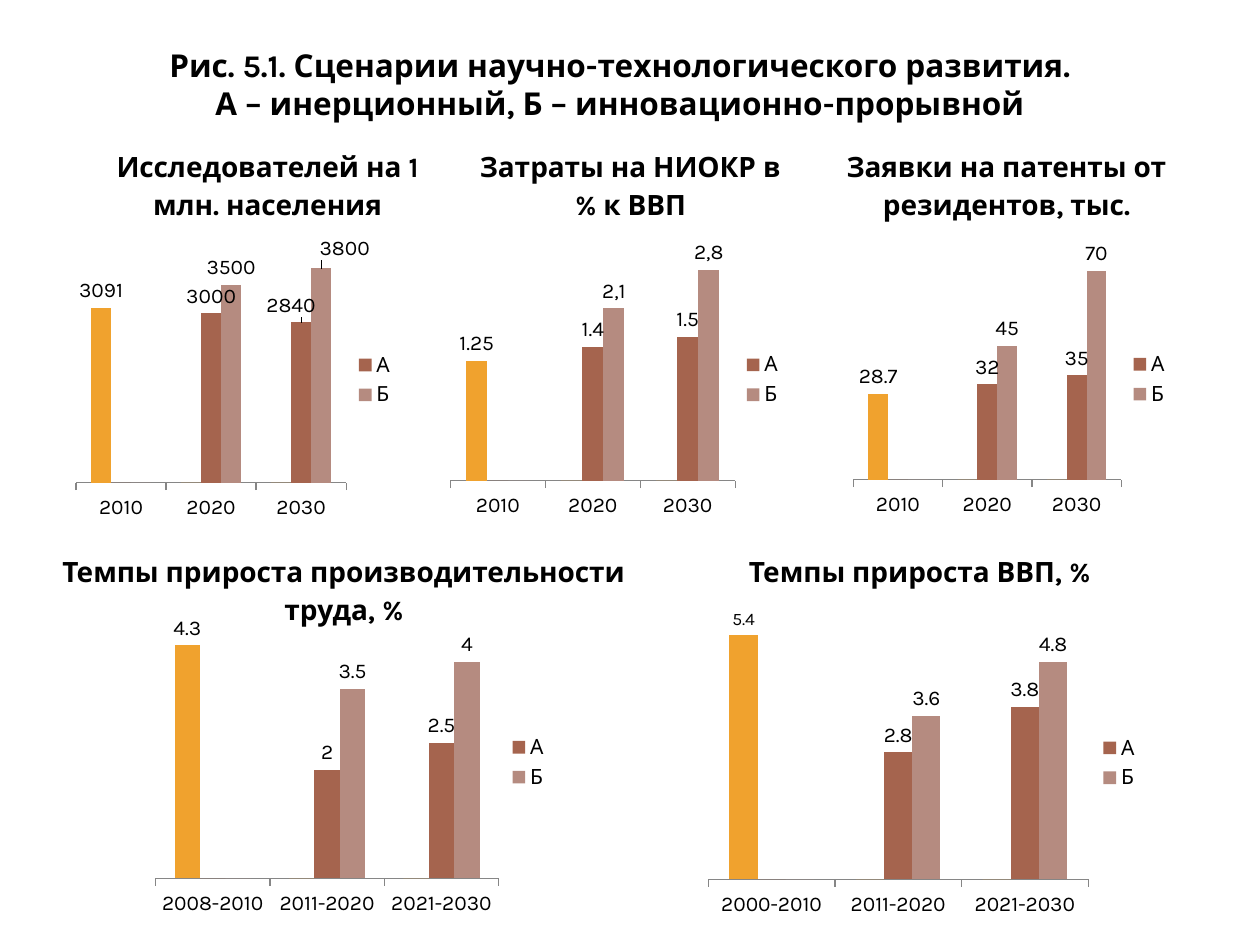
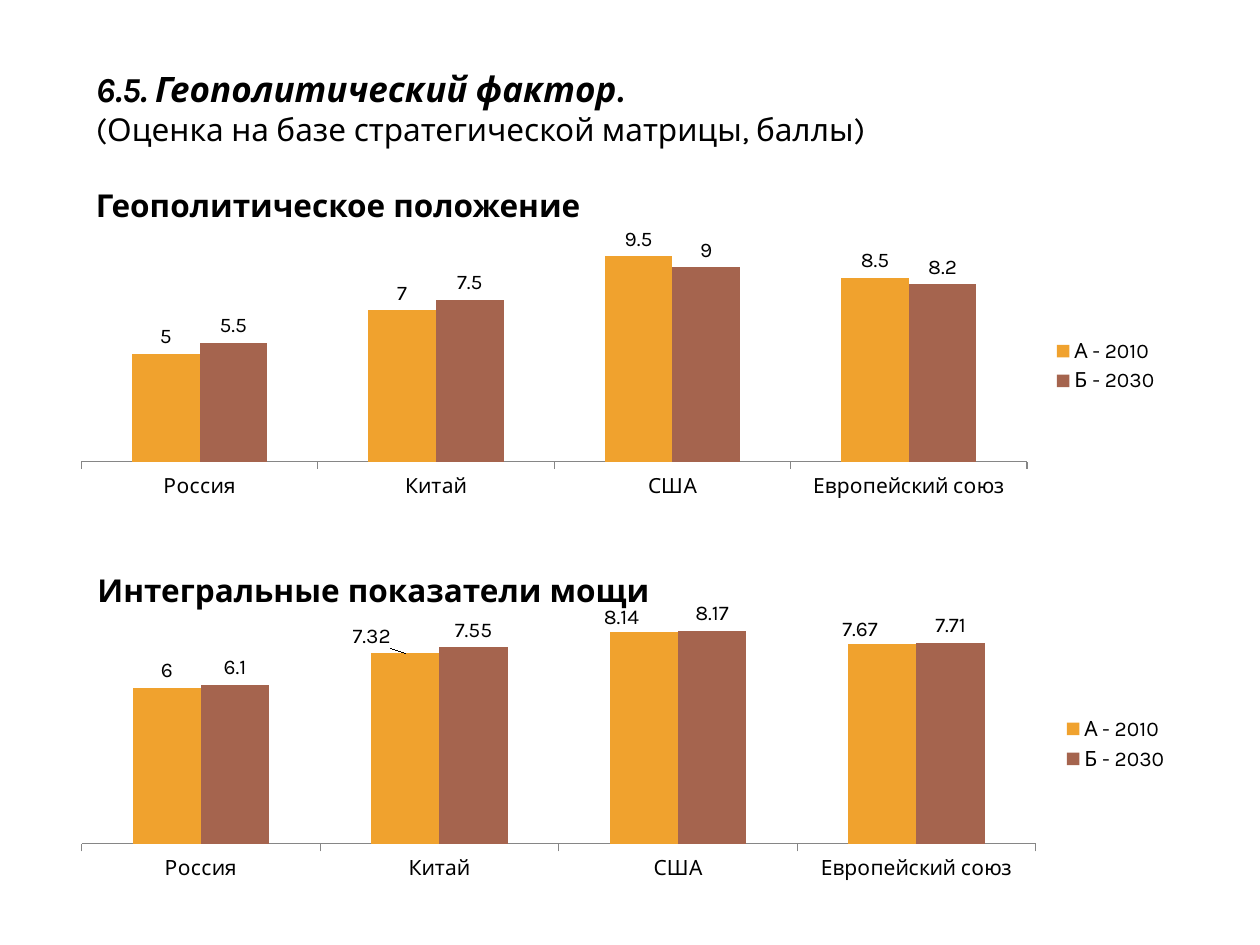
from lxml.etree import SubElement
from pptx import Presentation
from pptx.chart.data import CategoryChartData
from pptx.dml.color import RGBColor
from pptx.enum.chart import (XL_CHART_TYPE, XL_LABEL_POSITION,
                             XL_LEGEND_POSITION, XL_TICK_MARK)
from pptx.enum.text import MSO_ANCHOR, MSO_AUTO_SIZE, PP_ALIGN
from pptx.oxml import parse_xml
from pptx.oxml.ns import nsdecls, qn
from pptx.util import Pt

FONT = "Karla"
BLACK = RGBColor(0x00, 0x00, 0x00)
AXIS_GRAY = RGBColor(0x86, 0x86, 0x86)
ORANGE = RGBColor(0xF0, 0xA2, 0x2E)
BROWN = RGBColor(0xA5, 0x64, 0x4E)
ROSE = RGBColor(0xB5, 0x8B, 0x80)

YEARS = ["2010", "2020", "2030"]
COUNTRIES = ["Россия", "Китай", "США", "Европейский союз"]


def add_run(paragraph, text, size, bold=True, italic=False):
    run = paragraph.add_run()
    run.text = text
    font = run.font
    font.name, font.size = FONT, Pt(size)
    font.bold, font.italic = bold, italic
    font.color.rgb = BLACK


def add_text(slide, box, lines, align=PP_ALIGN.LEFT, indent=0,
             anchor=MSO_ANCHOR.MIDDLE):
    """Each line is (text, size, bold, italic, space before)."""
    frame = slide.shapes.add_textbox(*map(Pt, box)).text_frame
    frame.word_wrap = True
    frame.auto_size = MSO_AUTO_SIZE.SHAPE_TO_FIT_TEXT
    frame.vertical_anchor = anchor
    for index, (text, size, bold, italic, before) in enumerate(lines):
        paragraph = frame.add_paragraph() if index else frame.paragraphs[0]
        paragraph.alignment = align
        paragraph.space_before = Pt(before)
        paragraph._p.get_or_add_pPr().set("marL", str(Pt(indent)))
        add_run(paragraph, text, size, bold, italic)


def add_caption_row(slide, left, top, height, widths, captions):
    """Borderless one-row table with a heading above each chart."""
    table = slide.shapes.add_table(1, len(widths), Pt(left), Pt(top),
                                   Pt(sum(widths)), Pt(height)).table
    table.first_row = table.horz_banding = False
    table.rows[0].height = Pt(height)
    for column, (width, caption) in enumerate(zip(widths, captions)):
        table.columns[column].width = Pt(width)
        cell = table.cell(0, column)
        cell.fill.background()
        cell.margin_left = cell.margin_right = Pt(5)
        cell.margin_top = cell.margin_bottom = 0
        paragraph = cell.text_frame.paragraphs[0]
        paragraph.alignment = PP_ALIGN.CENTER
        paragraph.line_spacing = 1.15
        add_run(paragraph, caption, 16)


def layout_element(**settings):
    body = "".join(f'<c:{name} val="{value}"/>'
                   for name, value in settings.items())
    return parse_xml(f'<c:layout {nsdecls("c")}><c:manualLayout>{body}'
                     '</c:manualLayout></c:layout>')


def point_label(series, index):
    """Return the label of one point and its XML element."""
    label = series.points[index].data_label
    label.position = XL_LABEL_POSITION.OUTSIDE_END
    element = series.data_labels._element.xpath(
        f'c:dLbl[c:idx/@val="{index}"]')[0]
    return label, element


def hide_label(series, index):
    element = point_label(series, index)[1]
    for child in list(element)[1:]:
        element.remove(child)
    SubElement(element, qn("c:delete")).set("val", "1")


def shift_label(series, index, dx, dy=0):
    point_label(series, index)[1].insert(1, layout_element(x=dx, y=dy))


def rewrite_label(series, index, text):
    frame = point_label(series, index)[0].text_frame
    add_run(frame.paragraphs[0], text, 12, bold=False)


def add_columns(slide, box, categories, series_list, maximum, plot_box):
    """series_list holds (name, values, colour); plot_box is (top, width,
    height) of the inner plot as shares of the chart."""
    data = CategoryChartData()
    data.categories = categories
    for name, values, _ in series_list:
        data.add_series(name, values)
    chart = slide.shapes.add_chart(XL_CHART_TYPE.COLUMN_CLUSTERED,
                                   *map(Pt, box), data).chart
    chart.has_title = False
    chart.font.name, chart.font.size = FONT, Pt(12)
    chart.font.color.rgb = BLACK
    chart.has_legend = True
    chart.legend.position = XL_LEGEND_POSITION.RIGHT
    chart.legend.include_in_layout = False

    value_axis = chart.value_axis
    value_axis.visible = value_axis.has_major_gridlines = False
    value_axis.minimum_scale, value_axis.maximum_scale = 0, maximum
    category_axis = chart.category_axis
    category_axis.major_tick_mark = XL_TICK_MARK.OUTSIDE
    category_axis.format.line.color.rgb = AXIS_GRAY

    plot = chart.plots[0]
    plot.vary_by_categories = False
    plot.gap_width, plot.overlap = 150, 0
    for series, (_, values, color) in zip(plot.series, series_list):
        series.format.fill.solid()
        series.format.fill.fore_color.rgb = color
        series.data_labels.show_value = True
        series.data_labels.position = XL_LABEL_POSITION.OUTSIDE_END
        for index, value in enumerate(values):
            if value == 0:
                hide_label(series, index)

    plot_area = chart._chartSpace.xpath("c:chart/c:plotArea")[0]
    for old_layout in plot_area.findall(qn("c:layout")):
        plot_area.remove(old_layout)
    top, width, height = plot_box
    plot_area.insert(0, layout_element(
        layoutTarget="inner", xMode="edge", yMode="edge",
        x=0.02, y=top, w=width, h=height))
    return chart


def add_scenarios(slide, box, periods, base, inertial, breakthrough,
                  maximum, plot_box):
    """Base-period column followed by scenarios А and Б."""
    chart = add_columns(slide, box, periods, [
        ("Series 1", [base, 0, 0], ORANGE),
        ("А", [0, *inertial], BROWN),
        ("Б", [0, *breakthrough], ROSE),
    ], maximum, plot_box)
    chart.legend._element.insert(1, parse_xml(
        f'<c:legendEntry {nsdecls("c")}><c:idx val="0"/>'
        '<c:delete val="1"/></c:legendEntry>'))
    return chart.plots[0].series


def add_countries(slide, box, values_2010, values_2030, maximum, plot_box):
    chart = add_columns(slide, box, COUNTRIES, [
        ("А - 2010", values_2010, ORANGE),
        ("Б - 2030", values_2030, BROWN),
    ], maximum, plot_box)
    return chart.plots[0].series


def build_scenarios(slide):
    add_caption_row(slide, 44.6, 84.2, 56.2, [216.7, 198, 231.8], [
        "Исследователей на 1 млн. населения",
        "Затраты на НИОКР в % к ВВП",
        "Заявки на патенты от резидентов, тыс."])
    add_text(slide, (78.5, 22.3, 551.5, 51.1), [
        ("Рис. 5.1. Сценарии научно-технологического развития.",
         18, True, False, 0),
        ("А – инерционный, Б – инновационно-прорывной", 18, True, False, 0),
    ], PP_ALIGN.CENTER)
    add_caption_row(slide, 22.3, 315.4, 45.4, [348.5, 309.6], [
        "Темпы прироста производительности труда, %",
        "Темпы прироста ВВП, %"])

    _, inertial, breakthrough = add_scenarios(
        slide, (39.6, 134.6, 193, 164.2), YEARS,
        3091, [3000, 2840], [3500, 3800], 4000, (0.07, 0.8, 0.79))
    shift_label(inertial, 2, -0.03)
    shift_label(breakthrough, 2, 0.07, -0.01)

    _, _, breakthrough = add_scenarios(
        slide, (253.4, 134.6, 200.9, 164.9), YEARS,
        1.25, [1.4, 1.5], [1.8, 2.2], 2.5, (0.02, 0.81, 0.83))
    rewrite_label(breakthrough, 1, "2,1")
    rewrite_label(breakthrough, 2, "2,8")

    add_scenarios(slide, (483.8, 134.6, 191.5, 164.2), YEARS,
                  28.7, [32, 35], [45, 70], 80, (0.02, 0.8, 0.83))
    add_scenarios(slide, (84.2, 343.4, 236.2, 184.3),
                  ["2008-2010", "2011-2020", "2021-2030"],
                  4.3, [2, 2.5], [3.5, 4], 5, (0.02, 0.83, 0.84))
    base, _, _ = add_scenarios(
        slide, (399.6, 343.4, 258.5, 185),
        ["2000-2010", "2011-2020", "2021-2030"],
        5.4, [2.8, 3.8], [3.6, 4.8], 6, (0.02, 0.84, 0.84))
    point_label(base, 0)[0].font.size = Pt(10)


def build_geopolitics(slide):
    add_text(slide, (33.8, 35.3, 528.5, 121), [
        ("6.5. Геополитический фактор.", 20, True, True, 0),
        ("(Оценка на базе стратегической матрицы, баллы)",
         18, False, False, 0),
        ("Геополитическое положение", 18, True, False, 22),
    ], indent=14, anchor=MSO_ANCHOR.TOP)
    add_countries(slide, (33.8, 129.6, 635.8, 157.7),
                  [5, 7, 9.5, 8.5], [5.5, 7.5, 9, 8.2],
                  10, (0.06, 0.85, 0.79))
    power_2010, _ = add_countries(
        slide, (33.8, 343.4, 641.5, 163.4),
        [6, 7.32, 8.14, 7.67], [6.1, 7.55, 8.17, 7.71],
        9, (0.03, 0.85, 0.82))
    for country, dx, dy in [(1, -0.03, 0), (2, -0.02, 0.01),
                            (3, -0.02, 0.01)]:
        shift_label(power_2010, country, dx, dy)
    add_text(slide, (39.6, 322.6, 365.8, 28.8), [
        ("Интегральные показатели мощи", 18, True, False, 0)], indent=9)


def main():
    deck = Presentation()
    deck.slide_width, deck.slide_height = Pt(720), Pt(540)
    for build in (build_scenarios, build_geopolitics):
        build(deck.slides.add_slide(deck.slide_layouts[6]))
    deck.save("out.pptx")


if __name__ == "__main__":
    main()
